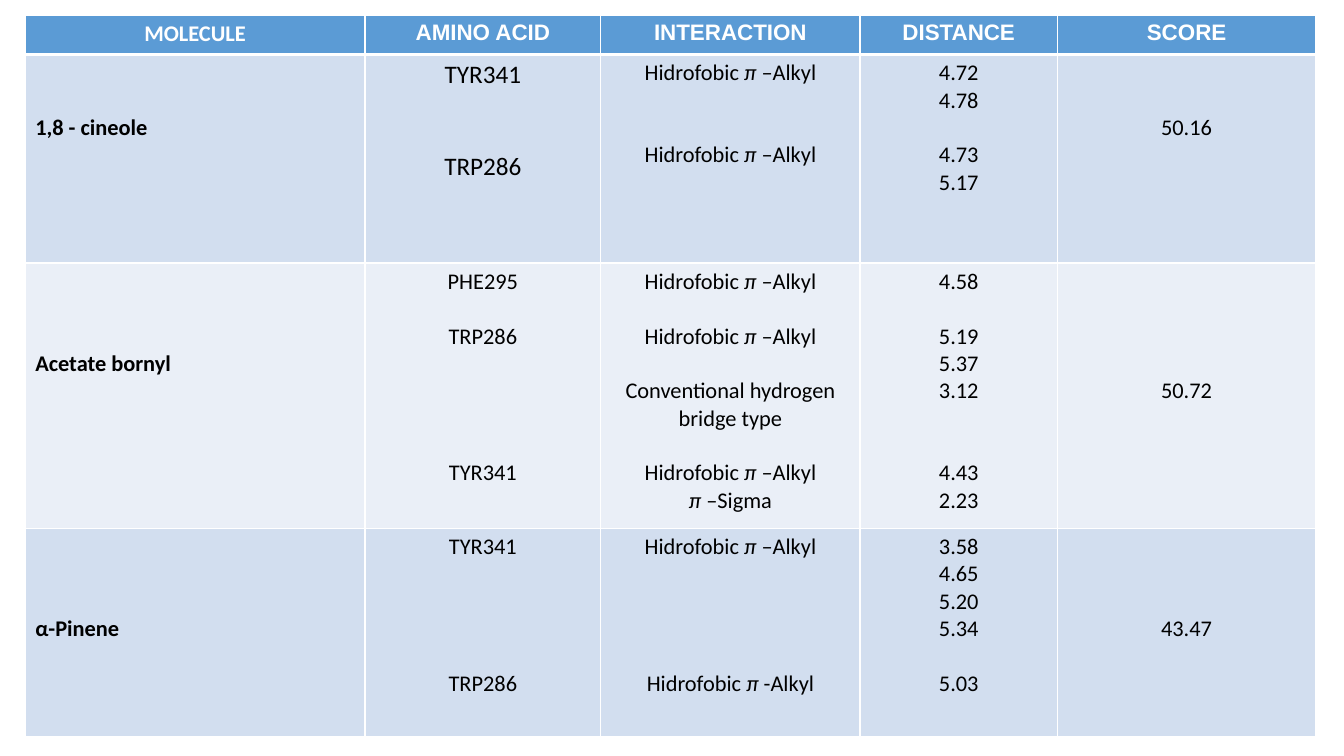
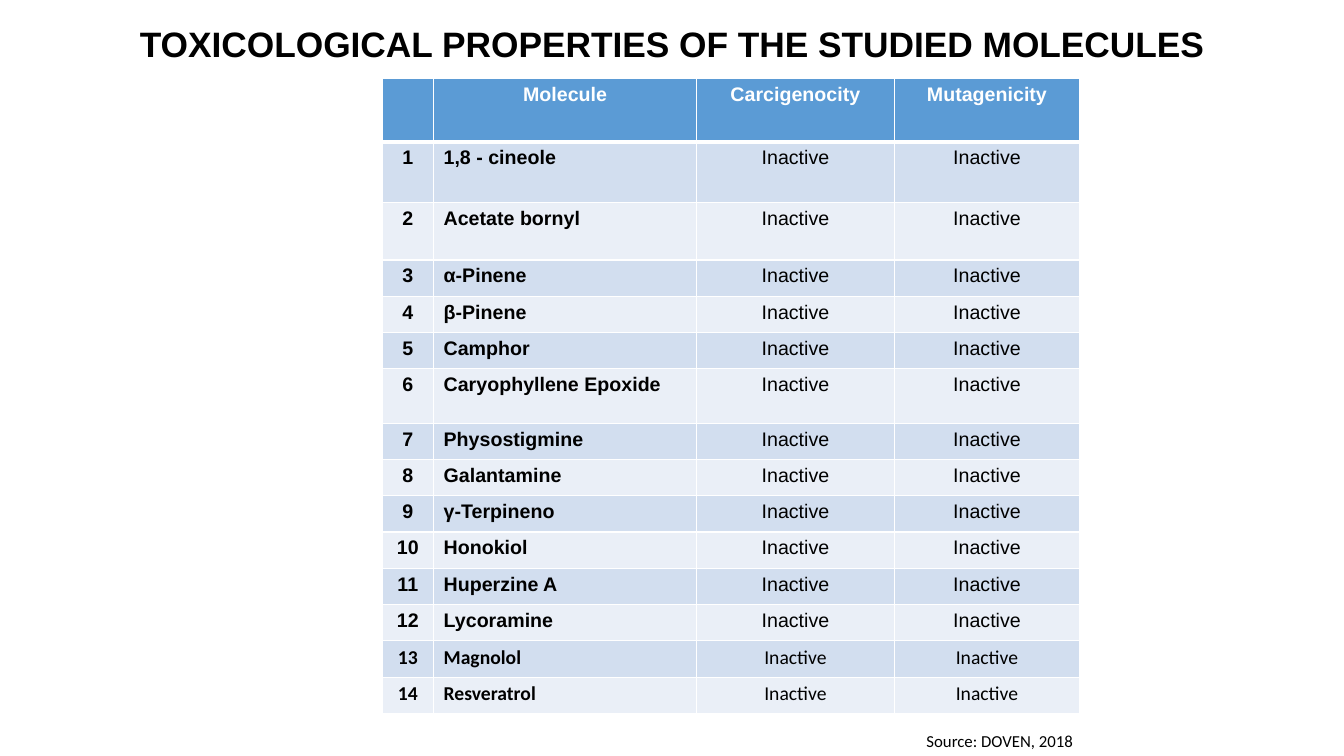
from lxml import etree
from pptx import Presentation
from pptx import util as u
from pptx.dml.color import RGBColor
from pptx.enum import text
from pptx.oxml.ns import qn

HEADER, BANDS = "5B9BD5", ("D2DEEF", "EAEFF7")
WHITE, BLACK = "FFFFFF", "000000"
SANS, BODY = "Arial", "Calibri"
LINE_PITCH = 1.22
CELL_TOP = 0.05
LEFT, CENTER = text.PP_ALIGN.LEFT, text.PP_ALIGN.CENTER

ALKYL = "Hidrofobic π –Alkyl"
DOCKING_HEADS = ["MOLECULE", "AMINO ACID", "INTERACTION", "DISTANCE", "SCORE"]
DOCKING = [
    [
        [(2, "1,8 - cineole")],
        [(0, "TYR341"), (2, "TRP286")],
        [(0, ALKYL), (2, ALKYL)],
        [(0, "4.72"), (0, "4.78"), (1, "4.73"), (0, "5.17")],
        [(2, "50.16")],
    ],
    [
        [(3, "Acetate bornyl")],
        [(0, "PHE295"), (1, "TRP286"), (4, "TYR341")],
        [(0, ALKYL), (1, ALKYL), (1, "Conventional hydrogen bridge type"),
         (1, ALKYL), (0, "π –Sigma")],
        [(0, "4.58"), (1, "5.19"), (0, "5.37"), (0, "3.12"), (2, "4.43"), (0, "2.23")],
        [(4, "50.72")],
    ],
    [
        [(3, "α-Pinene")],
        [(0, "TYR341"), (4, "TRP286")],
        [(0, ALKYL), (4, "Hidrofobic π -Alkyl")],
        [(0, "3.58"), (0, "4.65"), (0, "5.20"), (0, "5.34"), (1, "5.03")],
        [(3, "43.47")],
    ],
]
DOCKING_COLS = [3.37, 2.34, 2.57, 1.96, 2.56]
DOCKING_ROWS = [0.39, 2.07, 2.63, 2.07]

TOXICITY_TITLE = "TOXICOLOGICAL PROPERTIES OF THE STUDIED MOLECULES"
TOXICITY_HEADS = ["", "Molecule", "Carcigenocity", "Mutagenicity"]
MOLECULES = [
    "1,8 - cineole", "Acetate bornyl", "α-Pinene", "β-Pinene", "Camphor",
    "Caryophyllene Epoxide", "Physostigmine", "Galantamine", "γ-Terpineno",
    "Honokiol", "Huperzine A", "Lycoramine", "Magnolol", "Resveratrol",
]
CALIBRI_FROM = MOLECULES.index("Magnolol")
TOXICITY_COLS = [0.51, 2.61, 1.96, 1.84]
TALL_ROWS = {0: 0.6, 1: 0.57, 5: 0.54}
TOXICITY_ROWS = [0.63] + [TALL_ROWS.get(i, 0.36) for i in range(len(MOLECULES))]
SOURCE = "Source: DOVEN, 2018"


def rgb(value):
    return RGBColor.from_string(value)


def add_run(paragraph, wording, size, font, color=BLACK, bold=False, italic=False):
    run = paragraph.add_run()
    run.text = wording
    run.font.size = u.Pt(size)
    run.font.name = font
    run.font.bold = bold
    run.font.italic = italic
    run.font.color.rgb = rgb(color)


def add_wording(paragraph, wording, **style):
    for part in wording.partition("π"):
        if part:
            add_run(paragraph, part, italic=part == "π", **style)


def frame_cell(cell, widths):
    properties = cell._tc.get_or_add_tcPr()
    for side, width in zip("LRTB", widths):
        edge = etree.SubElement(properties, qn(f"a:ln{side}"), w=str(u.Pt(width)))
        fill = etree.SubElement(edge, qn("a:solidFill"))
        etree.SubElement(fill, qn("a:srgbClr"), val=WHITE)


def write_cell(cell, entries, align, size, **style):
    line = size * LINE_PITCH
    for i, (skipped, wording) in enumerate(entries):
        paragraph = cell.text_frame.paragraphs[0] if i == 0 else cell.text_frame.add_paragraph()
        paragraph.alignment = align
        if i == 0:
            cell.margin_top = u.Inches(CELL_TOP) + u.Pt(skipped * line)
        elif skipped:
            paragraph.space_before = u.Pt(skipped * line)
        add_wording(paragraph, wording, size=size, **style)


def add_grid(slide, left, top, cols, rows):
    lengths = [u.Inches(n) for n in (left, top, sum(cols), sum(rows))]
    grid = slide.shapes.add_table(len(rows), len(cols), *lengths).table
    grid.first_row = grid.horz_banding = False
    for column, width in zip(grid.columns, cols):
        column.width = u.Inches(width)
    for r, height in enumerate(rows):
        grid.rows[r].height = u.Inches(height)
        for cell in grid.rows[r].cells:
            frame_cell(cell, (1, 1, 3 if r == 1 else 1, 3 if r == 0 else 1))
            cell.fill.solid()
            cell.fill.fore_color.rgb = rgb(BANDS[(r - 1) % 2] if r else HEADER)
    return grid


def write_heads(grid, heads, size, fonts):
    for cell, head, font in zip(grid.rows[0].cells, heads, fonts):
        if head:
            write_cell(cell, [(0, head)], CENTER, size, font=font, color=WHITE, bold=True)


def build_docking(deck):
    slide = deck.slides.add_slide(deck.slide_layouts[6])
    grid = add_grid(slide, 0.25, 0.15, DOCKING_COLS, DOCKING_ROWS)
    write_heads(grid, DOCKING_HEADS, 16, [BODY] + [SANS] * 4)
    for r, molecule in enumerate(DOCKING):
        for c, entries in enumerate(molecule):
            size = 18 if (r, c) == (0, 1) else 16
            write_cell(grid.cell(r + 1, c), entries, LEFT if c == 0 else CENTER,
                       size, font=BODY, bold=c == 0)


def build_toxicity(deck):
    slide = deck.slides.add_slide(deck.slide_layouts[5])
    title = slide.shapes.title
    title.left, title.top, title.width, title.height = map(u.Inches, (0.92, 0.14, 11.5, 0.64))
    title.text_frame.auto_size = text.MSO_AUTO_SIZE.NONE
    title.text_frame.vertical_anchor = text.MSO_ANCHOR.MIDDLE
    heading = title.text_frame.paragraphs[0]
    heading.alignment = CENTER
    heading.line_spacing = 0.9
    add_run(heading, TOXICITY_TITLE, 25.2, SANS, bold=True)

    grid = add_grid(slide, 3.79, 0.78, TOXICITY_COLS, TOXICITY_ROWS)
    write_heads(grid, TOXICITY_HEADS, 14, [SANS] * 4)
    for r, molecule in enumerate(MOLECULES):
        font = BODY if r >= CALIBRI_FROM else SANS
        for c, wording in enumerate((str(r + 1), molecule, "Inactive", "Inactive")):
            write_cell(grid.cell(r + 1, c), [(0, wording)], LEFT if c == 1 else CENTER,
                       14, font=font, bold=c < 2)

    source = slide.shapes.add_textbox(*map(u.Inches, (9.09, 7.2, 3.06, 0.3))).text_frame
    source.word_wrap = True
    source.auto_size = text.MSO_AUTO_SIZE.SHAPE_TO_FIT_TEXT
    add_run(source.paragraphs[0], SOURCE, 12, BODY)


def main():
    deck = Presentation()
    deck.slide_width, deck.slide_height = u.Inches(13.33), u.Inches(7.5)
    build_docking(deck)
    build_toxicity(deck)
    deck.save("out.pptx")


if __name__ == "__main__":
    main()
